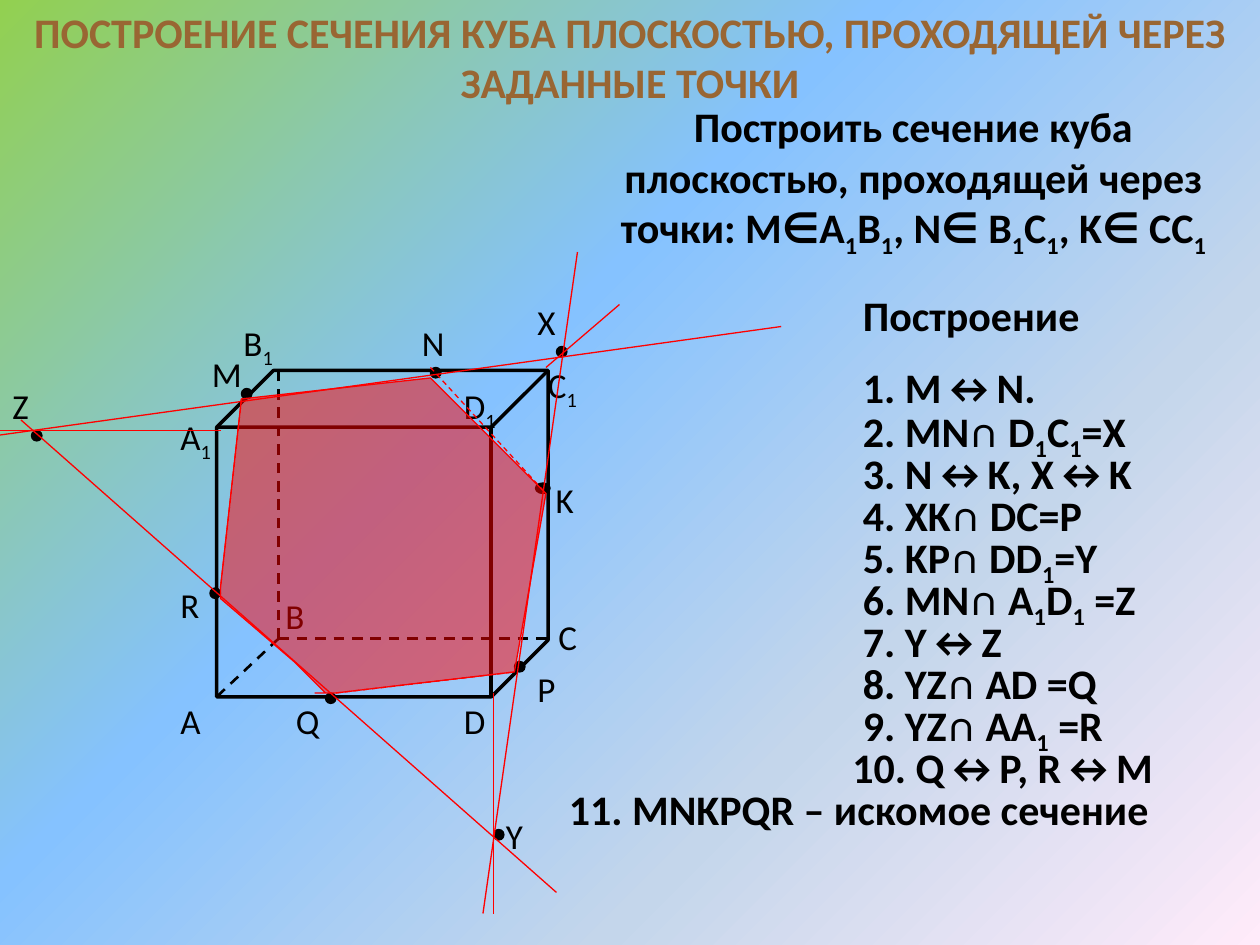
from dataclasses import dataclass

from lxml import etree
from pptx import Presentation
from pptx.dml.color import RGBColor
from pptx.enum.dml import MSO_LINE
from pptx.enum.shapes import MSO_CONNECTOR, MSO_SHAPE
from pptx.enum.text import MSO_AUTO_SIZE, PP_ALIGN
from pptx.oxml.ns import qn
from pptx.util import Cm, Pt

LEFT, MID = PP_ALIGN.LEFT, PP_ALIGN.CENTER
DASH, LINE = MSO_LINE.DASH, MSO_CONNECTOR.STRAIGHT
CUBE, DOT = MSO_SHAPE.CUBE, MSO_SHAPE.FLOWCHART_CONNECTOR
FIT = MSO_AUTO_SIZE.SHAPE_TO_FIT_TEXT
UNIT = 2.54 / 12  # one grid step in cm


@dataclass
class Theme:
    ink: str = "000000"
    head: str = "996633"
    red: str = "FF0000"
    sky: tuple = ((0, "92D050"), (40, "85C2FF"), (70, "C4D6EB"), (100, "FFEBFA"))
    bold = {"name": "Calibri", "size": Pt(24), "bold": True}
    plain = {"name": "Calibri", "size": Pt(20), "bold": False}


@dataclass
class Box:
    """An area of the slide, in grid steps."""
    x: float
    y: float
    w: float
    h: float

    def sub(self, x, y, w, h):
        return Box(self.x + x, self.y + y, w, h)

    def spot(self, x, y):
        return Cm((self.x + x) * UNIT), Cm((self.y + y) * UNIT)

    def emu(self):
        return *self.spot(0, 0), Cm(self.w * UNIT), Cm(self.h * UNIT)


THEME = Theme()

STEPS = (
    "2. MN∩ D_1C_1=X", "3. N↔K, X↔K", "4. XK∩ DC=P", "5. KP∩ DD_1=Y",
    "6. MN∩ A_1D_1 =Z", "7. Y↔Z", "8. YZ∩ AD =Q", "9. YZ∩ AA_1 =R",
)
CORNERS = {
    "A": (16, 42), "B": (26, 32), "C": (52, 34), "D": (43, 42),
    "A_1": (16, 15), "B_1": (22, 6), "C_1": (51, 10), "D_1": (43, 12),
}
# name: place of the dot, place of the label
POINTS = {
    "N": ((41, 11), (39, 6)), "M": ((23, 13), (19, 9)),
    "K": ((51, 22), (51.75, 21)), "X": ((53, 9), (50, 4)),
    "P": ((49, 39), (50, 39)), "Z": ((3, 17), (0, 12)),
    "Y": ((47, 55), (47, 53)), "Q": ((31, 42), (27, 42)),
    "R": ((20, 32), (16, 31)),
}
RAYS = (
    ((-0.5, 17.5), (74.4, 7.1)), ((52, 11), (59, 5)), ((55, 0), (46, 63)),
    ((47, 42), (47, 63)), ((21, 17), (0, 17)), ((2, 16), (53, 61)),
)
SIDES = (((41, 11), (52, 23)), ((32, 42), (49, 40)), ((23, 14), (21, 32)))
CUT = (
    (21.1, 32.3), (23.2, 14.4), (41.4, 11.9), (51.7, 22.9), (49.2, 39.8),
    (31.9, 41.9), (30.5, 42), (31.8, 41.9), (31.3, 41.8), (30.1, 40.8),
    (28, 38.9), (21.2, 32.8),
)


def rgb(code):
    return RGBColor.from_string(code)


def fill_run(para, text, fmt, color, low=False):
    run = para.add_run()
    run.text = text
    for key, value in fmt.items():
        setattr(run.font, key, value)
    run.font.color.rgb = rgb(color)
    if low:
        run.font._element.set("baseline", "-25000")


def write(shapes, box, *lines, fmt=THEME.bold, color=THEME.ink, align=LEFT):
    """Place lines of text; the sign after each _ is a subscript."""
    frame = shapes.add_textbox(*box.emu()).text_frame
    frame.word_wrap = True
    frame.auto_size = FIT
    for i, line in enumerate(lines):
        para = frame.add_paragraph() if i else frame.paragraphs[0]
        para.alignment = align
        if i:
            para.space_before = Pt(12)
        first, *rest = line.split("_")
        fill_run(para, first, fmt, color)
        for part in rest:
            fill_run(para, part[0], fmt, color, low=True)
            if part[1:]:
                fill_run(para, part[1:], fmt, color)


def draw_line(shapes, box, start, end, color=THEME.red, width=0.75, dash=None):
    line = shapes.add_connector(LINE, *box.spot(*start), *box.spot(*end))
    line.line.color.rgb = rgb(color)
    line.line.width = Pt(width)
    if dash:
        line.line.dash_style = dash
    etree.SubElement(line._element.spPr, qn("a:effectLst"))


def paint(shape, fill, edge, width):
    shape.shadow.inherit = False
    if fill:
        shape.fill.solid()
        shape.fill.fore_color.rgb = rgb(fill)
    else:
        shape.fill.background()
    shape.line.color.rgb = rgb(edge)
    shape.line.width = Pt(width)


def draw_cube(slide, box):
    shapes = slide.shapes.add_group_shape().shapes
    back = (26.52, 36.84)
    for end in ((52.2, 36.84), (20.64, 42.36), (26.52, 11.28)):
        draw_line(shapes, box, back, end, THEME.ink, 1.5, DASH)
    cube = shapes.add_shape(CUBE, *box.sub(20.64, 11.28, 31.56, 31.08).emu())
    cube.adjustments[0] = 0.174
    paint(cube, None, THEME.ink, 2)
    for name, place in CORNERS.items():
        write(shapes, box.sub(*place, 10, 5.2), name, fmt=THEME.plain)


def draw_points(slide, box):
    for name, (dot, label) in POINTS.items():
        shapes = slide.shapes.add_group_shape().shapes
        width = 1.4 if name == "K" else 1
        mark = shapes.add_shape(DOT, *box.sub(*dot, width, 1).emu())
        paint(mark, THEME.ink, THEME.ink, 0.75)
        write(shapes, box.sub(*label, 5, 5.2), name, fmt=THEME.plain)


def draw_cut(slide, box):
    pen = slide.shapes.build_freeform(*CUT[0], scale=Cm(UNIT))
    pen.add_line_segments(CUT[1:], close=True)
    cut = pen.convert_to_shape(*box.spot(0, 0))
    paint(cut, THEME.red, THEME.red, 0.75)
    tint = cut._element.spPr.find(qn("a:solidFill"))[0]
    etree.SubElement(tint, qn("a:alpha"), val="50000")


def draw_figure(slide, box):
    draw_cube(slide, box)
    draw_points(slide, box)
    for ray in RAYS:
        draw_line(slide.shapes, box, *ray)
    for side in SIDES:
        draw_line(slide.shapes, box, *side, dash=DASH)
    draw_cut(slide, box)


def list_steps(slide, box):
    shapes = slide.shapes
    write(shapes, box.sub(28, 0, 44, 13.3), "Построение", "1. M↔N.")
    for i, step in enumerate(STEPS):
        write(shapes, box.sub(28, 11 + 4 * i, 44, 6), step)
    write(shapes, box.sub(27, 43, 44, 6), "10. Q↔P, R↔M")
    write(shapes, box.sub(0, 47, 72, 6), "11. MNKPQR – искомое сечение")


def paint_sky(slide):
    fill = slide.background.fill
    fill.gradient()
    fill.gradient_angle = 315
    stops = slide.element.find(".//" + qn("a:gsLst"))
    for old in list(stops):
        stops.remove(old)
    for place, code in THEME.sky:
        stop = etree.SubElement(stops, qn("a:gs"), pos=str(place * 1000))
        etree.SubElement(stop, qn("a:srgbClr"), val=code)


def main():
    deck = Presentation()
    deck.slide_width, deck.slide_height = Cm(25.4), Cm(19.05)
    slide = deck.slides.add_slide(deck.slide_layouts[6])
    paint_sky(slide)
    write(slide.shapes, Box(0, 0, 120, 10.9),
          "ПОСТРОЕНИЕ СЕЧЕНИЯ КУБА ПЛОСКОСТЬЮ, ПРОХОДЯЩЕЙ ЧЕРЕЗ ЗАДАННЫЕ ТОЧКИ",
          color=THEME.head, align=MID)
    write(slide.shapes, Box(54, 9, 66, 15.7),
          "Построить сечение куба плоскостью, проходящей через "
          "точки: М∈A_1В_1, N∈ B_1C_1, K∈ CC_1", align=MID)
    list_steps(slide, Box(53, 27, 72, 53))
    draw_figure(slide, Box(0, 24, 75, 63))
    deck.save("out.pptx")


if __name__ == "__main__":
    main()
